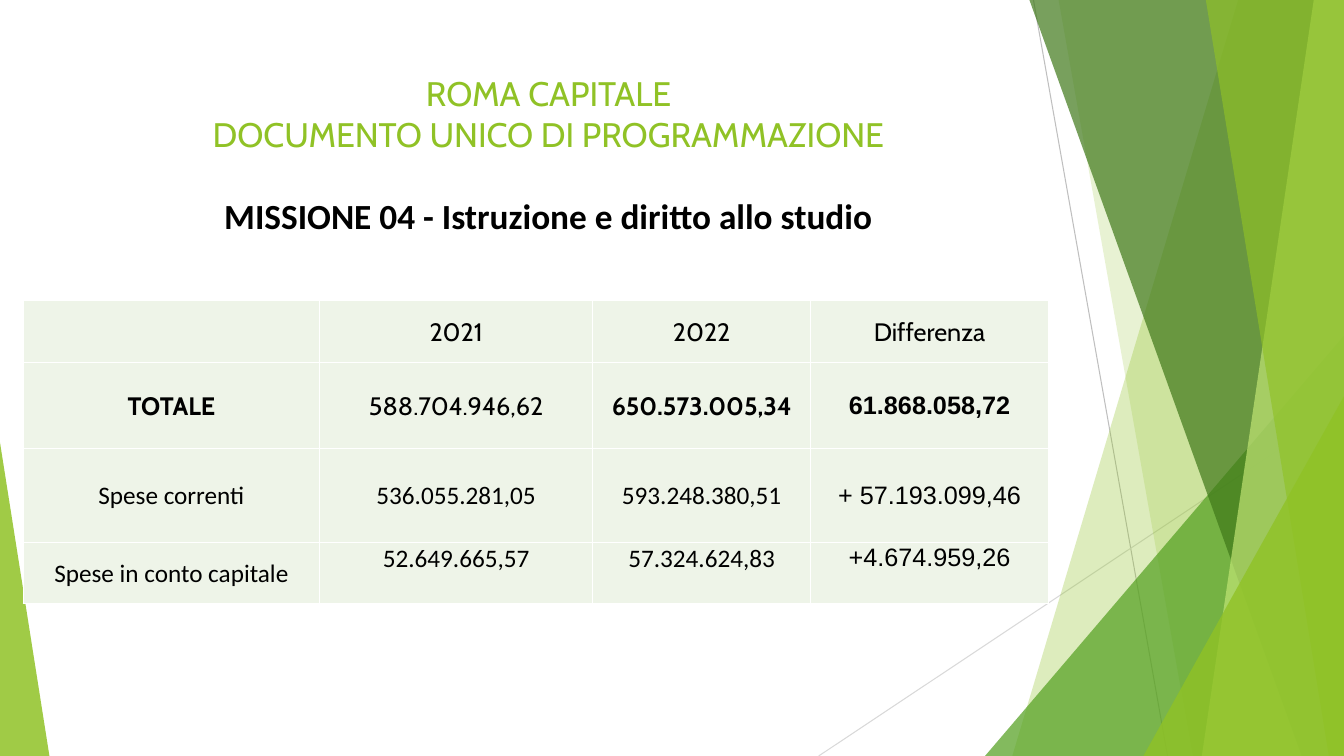
from dataclasses import dataclass

from lxml.etree import SubElement
from pptx import Presentation
from pptx.dml.color import RGBColor
from pptx.enum.shapes import MSO_CONNECTOR, MSO_SHAPE
from pptx.enum.text import MSO_ANCHOR, PP_ALIGN
from pptx.oxml.ns import qn
from pptx.util import Inches, Pt

LIME = RGBColor(0x90, 0xC2, 0x26)
GREEN = RGBColor(0x54, 0xA0, 0x21)
FOREST = RGBColor(0x3F, 0x78, 0x19)
PALE_LIME = RGBColor(0xC0, 0xE4, 0x74)
MID_GREY = RGBColor(0xBF, 0xBF, 0xBF)
LIGHT_GREY = RGBColor(0xD9, 0xD9, 0xD9)
CELL_TINT = RGBColor(0xEE, 0xF4, 0xE8)
WHITE = RGBColor(0xFF, 0xFF, 0xFF)
BLACK = RGBColor(0, 0, 0)
SLIDE_W, SLIDE_H = 13.33, 7.5


@dataclass
class Ray:
    start: tuple[float, float]
    end: tuple[float, float]
    color: RGBColor


@dataclass
class Band:
    """Runs from its top and bottom x to the right edge of the slide."""
    top_x: float
    bottom_x: float
    color: RGBColor
    opacity: int


@dataclass
class Wedge:
    """Triangle standing on the bottom edge, with its apex at one side."""
    left: float
    width: float
    height: float
    apex: float
    color: RGBColor
    opacity: int


@dataclass
class Entry:
    text: str
    font: str = "Calibri"
    bold: bool = False
    anchor: MSO_ANCHOR = MSO_ANCHOR.MIDDLE


RAYS = [
    Ray((10.25, 0), (11.58, SLIDE_H), MID_GREY),
    Ray((SLIDE_W, 4.03), (8.12, SLIDE_H), LIGHT_GREY),
]
FACETS = [
    Band(12.28, 10.04, LIME, 30),
    Band(10.5, 11.83, LIME, 20),
    Wedge(9.77, 3.56, 4.17, 1, GREEN, 72),
    Band(10.21, 12.91, FOREST, 70),
    Band(13.03, 11.92, PALE_LIME, 70),
    Band(11.96, 13.18, LIME, 65),
    Wedge(11.34, 1.99, 3.57, 1, LIME, 80),
    Wedge(0, 0.49, 3.11, 0, LIME, 85),
]
COLUMN_WIDTHS = [2.94, 2.71, 2.16, 2.36]
ROW_HEIGHTS = [0.62, 0.85, 0.93, 0.61]
TOP = MSO_ANCHOR.TOP
BUDGET = [
    [Entry(""), Entry("2021", "Cabin"), Entry("2022", "Cabin"),
     Entry("Differenza", "Cabin")],
    [Entry("TOTALE", "Cabin", True), Entry("588.704.946,62", "Cabin"),
     Entry("650.573.005,34", "Cabin", True),
     Entry("61.868.058,72", "Arial", True)],
    [Entry("Spese correnti"), Entry("536.055.281,05"),
     Entry("593.248.380,51"), Entry("+ 57.193.099,46", "Arial")],
    [Entry("Spese in conto capitale"), Entry("52.649.665,57", anchor=TOP),
     Entry("57.324.624,83", anchor=TOP),
     Entry("+4.674.959,26", "Arial", anchor=TOP)],
]


def set_all(target, values: dict) -> None:
    for attribute, value in values.items():
        setattr(target, attribute, value)


def write(paragraph, text: str, color: RGBColor, font: dict) -> None:
    paragraph.alignment = PP_ALIGN.CENTER
    run = paragraph.add_run()
    run.text = text
    set_all(run.font, font)
    run.font.color.rgb = color


def draw_ray(slide, ray: Ray) -> None:
    ends = [Inches(n) for n in ray.start + ray.end]
    line = slide.shapes.add_connector(MSO_CONNECTOR.STRAIGHT, *ends)
    line.line.color.rgb = ray.color
    line.line.width = Pt(0.75)
    SubElement(line._element.spPr, qn("a:effectLst"))


def draw_facet(slide, facet: Band | Wedge) -> None:
    if isinstance(facet, Band):
        outline = slide.shapes.build_freeform(
            Inches(facet.top_x), 0, scale=1.0)
        corners = [(SLIDE_W, 0), (SLIDE_W, SLIDE_H), (facet.bottom_x, SLIDE_H)]
        outline.add_line_segments([(Inches(x), Inches(y)) for x, y in corners])
        shape = outline.convert_to_shape()
    else:
        shape = slide.shapes.add_shape(
            MSO_SHAPE.ISOSCELES_TRIANGLE, Inches(facet.left),
            Inches(SLIDE_H - facet.height), Inches(facet.width),
            Inches(facet.height))
        shape.adjustments[0] = facet.apex
    shape.shadow.inherit = False
    shape.line.fill.background()
    shape.fill.solid()
    shape.fill.fore_color.rgb = facet.color
    tint = shape._element.spPr.find(".//" + qn("a:srgbClr"))
    SubElement(tint, qn("a:alpha"), val=str(facet.opacity * 1000))


def draw_heading(slide) -> None:
    heading = slide.shapes.add_textbox(
        Inches(0.74), Inches(0.67), Inches(9.4), Inches(1.8)).text_frame
    heading.word_wrap = True
    plain = {"name": "Cabin", "size": Pt(24.3)}
    strong = {"name": "Calibri", "size": Pt(25.2), "bold": True}
    write(heading.paragraphs[0], "ROMA CAPITALE", LIME, plain)
    write(heading.add_paragraph(), "DOCUMENTO UNICO DI PROGRAMMAZIONE",
          LIME, plain)
    mission = heading.add_paragraph()
    mission.space_before = Pt(29)
    write(mission, "MISSIONE 04 - Istruzione e diritto allo studio",
          BLACK, strong)


def fill_cell(cell, entry: Entry) -> None:
    edge = Inches(0.01)
    set_all(cell, {"margin_left": edge, "margin_right": edge,
                   "margin_top": edge, "margin_bottom": 0,
                   "vertical_anchor": entry.anchor})
    # Borders come before the fill in the cell properties
    properties = cell._tc.get_or_add_tcPr()
    for side in ("lnL", "lnR", "lnT", "lnB"):
        border = SubElement(properties, qn(f"a:{side}"), w=str(Pt(1)))
        solid = SubElement(border, qn("a:solidFill"))
        SubElement(solid, qn("a:srgbClr"), val=str(WHITE))
    cell.fill.solid()
    cell.fill.fore_color.rgb = CELL_TINT
    if entry.text:
        write(cell.text_frame.paragraphs[0], entry.text, BLACK,
              {"name": entry.font, "size": Pt(18), "bold": entry.bold})


def draw_budget(slide) -> None:
    budget = slide.shapes.add_table(
        len(ROW_HEIGHTS), len(COLUMN_WIDTHS), Inches(0.23), Inches(2.98),
        Inches(sum(COLUMN_WIDTHS)), Inches(sum(ROW_HEIGHTS))).table
    set_all(budget, {"first_row": False, "horz_banding": False})
    for column, width in zip(budget.columns, COLUMN_WIDTHS):
        column.width = Inches(width)
    for row, height, entries in zip(budget.rows, ROW_HEIGHTS, BUDGET):
        row.height = Inches(height)
        for cell, entry in zip(row.cells, entries):
            fill_cell(cell, entry)


def main() -> None:
    deck = Presentation()
    set_all(deck, {"slide_width": Inches(SLIDE_W),
                   "slide_height": Inches(SLIDE_H)})
    slide = deck.slides.add_slide(deck.slide_layouts[6])
    # Green backdrop
    for ray in RAYS:
        draw_ray(slide, ray)
    for facet in FACETS:
        draw_facet(slide, facet)
    # Content
    draw_heading(slide)
    draw_budget(slide)
    deck.save("out.pptx")


if __name__ == "__main__":
    main()
